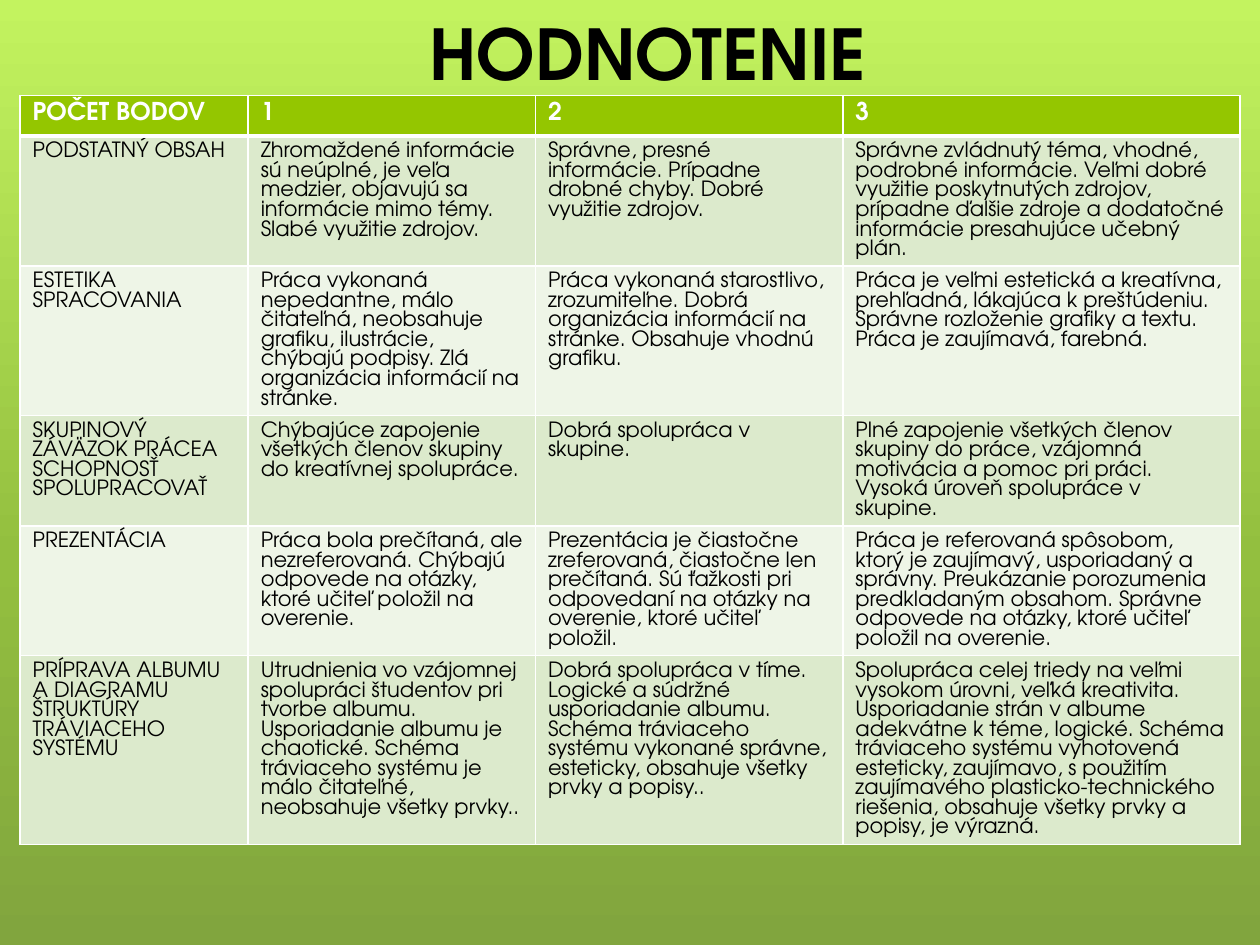
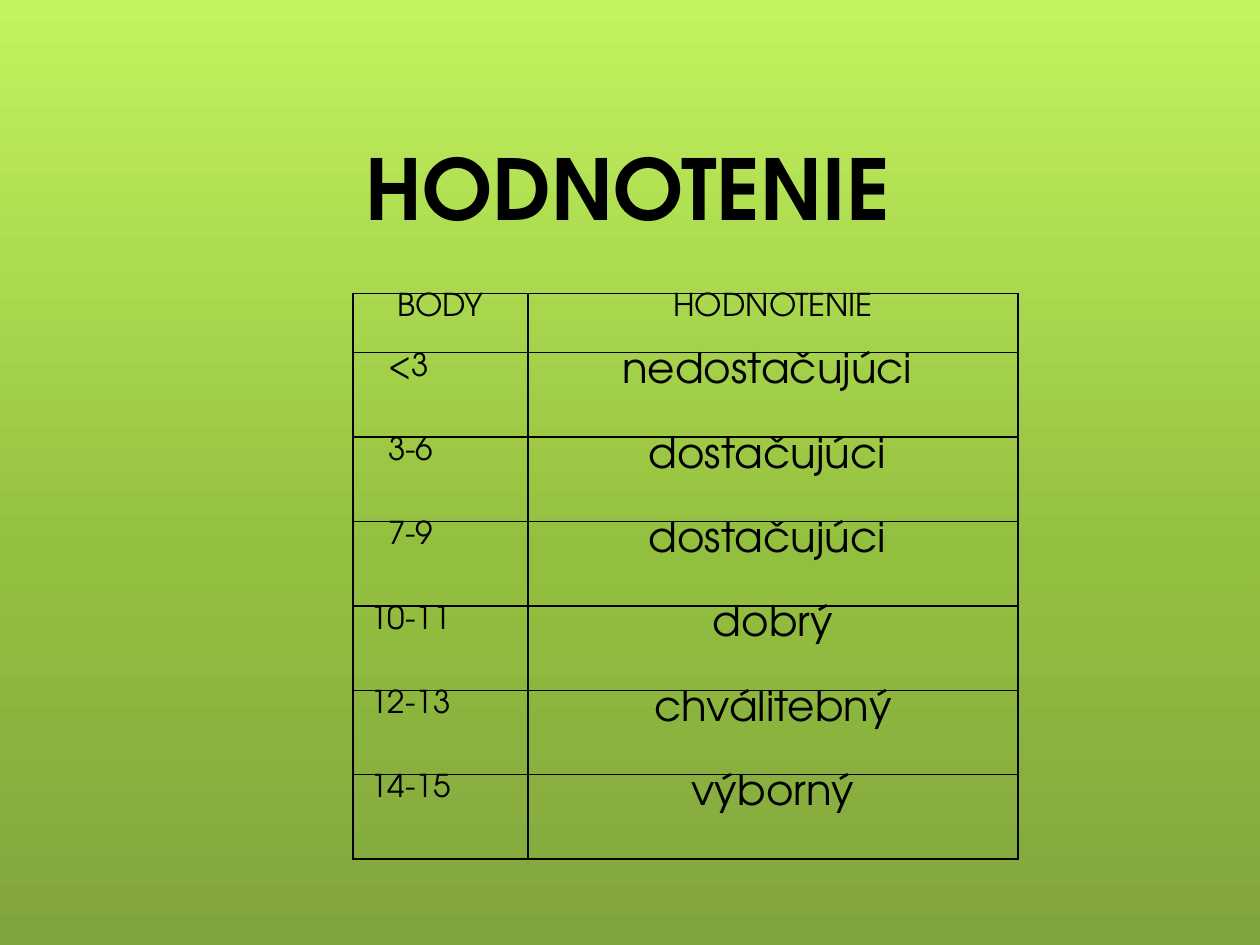
from copy import deepcopy

from lxml import etree
from pptx import Presentation
from pptx import util as u
from pptx.dml.color import RGBColor
from pptx.enum import text
from pptx.oxml.ns import qn

FONT = "TeX Gyre Adventor"
BLACK, WHITE, GREEN = "000000", "FFFFFF", "94C600"
BANDS = ("DCEACC", "EEF5E7")
GRADIENT = [(0, "C3F35F"), (0.59, "93BF3F"), (1, "81A53E")]
TITLE = "HODNOTENIE"

RUBRIC = [
    ("POČET BODOV", "1", "2", "3"),
    ("PODSTATNÝ OBSAH",
     "Zhromaždené informácie sú neúplné, je veľa medzier, objavujú sa informácie "
     "mimo témy. Slabé využitie zdrojov.",
     "Správne, presné informácie. Prípadne drobné chyby. Dobré využitie zdrojov.",
     "Správne zvládnutý téma, vhodné, podrobné informácie. Veľmi dobré využitie "
     "poskytnutých zdrojov, prípadne ďalšie zdroje a dodatočné informácie "
     "presahujúce učebný plán."),
    ("ESTETIKA SPRACOVANIA",
     "Práca vykonaná nepedantne, málo čitateľná, neobsahuje grafiku, ilustrácie, "
     "chýbajú podpisy. Zlá organizácia informácií na stránke.",
     "Práca vykonaná starostlivo, zrozumiteľne. Dobrá organizácia informácií na "
     "stránke. Obsahuje vhodnú grafiku.",
     "Práca je veľmi estetická a kreatívna, prehľadná, lákajúca k preštúdeniu. "
     "Správne rozloženie grafiky a textu. Práca je zaujímavá, farebná."),
    ("SKUPINOVÝ ZÁVÄZOK PRÁCEA SCHOPNOSŤ SPOLUPRACOVAŤ",
     "Chýbajúce zapojenie všetkých členov skupiny do kreatívnej spolupráce.",
     "Dobrá spolupráca v skupine.",
     "Plné zapojenie všetkých členov skupiny do práce, vzájomná motivácia a pomoc "
     "pri práci. Vysoká úroveň spolupráce v skupine."),
    ("PREZENTÁCIA",
     "Práca bola prečítaná, ale nezreferovaná. Chýbajú odpovede na otázky, ktoré "
     "učiteľ položil na overenie.",
     "Prezentácia je čiastočne zreferovaná, čiastočne len prečítaná. Sú ťažkosti "
     "pri odpovedaní na otázky na overenie, ktoré učiteľ položil.",
     "Práca je referovaná spôsobom, ktorý je zaujímavý, usporiadaný a správny. "
     "Preukázanie porozumenia predkladaným obsahom. Správne odpovede na otázky, "
     "ktoré učiteľ položil na overenie."),
    ("PRÍPRAVA ALBUMU A DIAGRAMU ŠTRUKTÚRY TRÁVIACEHO SYSTÉMU",
     "Utrudnienia vo vzájomnej spolupráci študentov pri tvorbe albumu. Usporiadanie "
     "albumu je chaotické. Schéma tráviaceho systému je málo čitateľné, neobsahuje "
     "všetky prvky..",
     "Dobrá spolupráca v tíme. Logické a súdržné usporiadanie albumu. Schéma "
     "tráviaceho systému vykonané správne, esteticky, obsahuje všetky prvky a "
     "popisy..",
     "Spolupráca celej triedy na veľmi vysokom úrovni, veľká kreativita. "
     "Usporiadanie strán v albume adekvátne k téme, logické. Schéma tráviaceho "
     "systému vyhotovená esteticky, zaujímavo, s použitím zaujímavého "
     "plasticko-technického riešenia, obsahuje všetky prvky a popisy, je výrazná."),
]
GRADES = [
    ("BODY", "HODNOTENIE"),
    ("<3", "nedostačujúci "),
    ("3-6", "dostačujúci "),
    ("7-9", "dostačujúci "),
    ("10-11", "dobrý"),
    ("12-13", "chválitebný"),
    ("14-15", "výborný"),
]


def rgb(color):
    return RGBColor.from_string(color)


def style(tf, size, color=BLACK, bold=False, align=text.PP_ALIGN.LEFT):
    for p in tf.paragraphs:
        p.alignment = align
        for r in p.runs:
            r.font.name, r.font.size, r.font.bold = FONT, u.Pt(size), bold
            r.font.color.rgb = rgb(color)


def set_background(master):
    fill = master.background.fill
    fill.gradient()
    fill.gradient_angle = 270
    stops = master.element.find(".//" + qn("a:gsLst"))
    stops.insert(1, deepcopy(stops[0]))
    for stop, (position, color) in zip(fill.gradient_stops, GRADIENT):
        stop.position = position
        stop.color.rgb = rgb(color)


def add_titled_slide(prs, box, size):
    s = prs.slides.add_slide(prs.slide_layouts[5])
    sp = s.shapes.title
    sp.left, sp.top, sp.width, sp.height = map(u.Inches, box)
    tf = sp.text_frame
    tf.text = TITLE
    tf.vertical_anchor = text.MSO_ANCHOR.BOTTOM
    style(tf, size, bold=True, align=text.PP_ALIGN.CENTER)
    return s


def set_borders(cell, color, top=1, bottom=1):
    tc_pr = cell._tc.get_or_add_tcPr()
    widths = {"lnL": 1, "lnR": 1, "lnT": top, "lnB": bottom}
    for i, (tag, width) in enumerate(widths.items()):
        ln = etree.Element(qn("a:" + tag), w=str(u.Pt(width)))
        solid = etree.SubElement(ln, qn("a:solidFill"))
        etree.SubElement(solid, qn("a:srgbClr"), val=color)
        tc_pr.insert(i, ln)


def add_grid(s, left, top, widths, heights, rows):
    size = sum(widths), sum(heights)
    frame = s.shapes.add_table(len(rows), len(widths),
                               *map(u.Inches, (left, top, *size)))
    table = frame.table
    for column, width in zip(table.columns, widths):
        column.width = u.Inches(width)
    for row, height, values in zip(table.rows, heights, rows):
        row.height = u.Inches(height)
        for cell, value in zip(row.cells, values):
            cell.text_frame.text = value
    return table


def add_rubric(s):
    table = add_grid(s, 0.16, 0.76, (1.81, 2.28, 2.44, 3.15),
                     [0.32] + [0.41] * (len(RUBRIC) - 1), RUBRIC)
    for i, row in enumerate(table.rows):
        header = i == 0
        for cell in row.cells:
            set_borders(cell, WHITE, top=3 if i == 1 else 1, bottom=3 if header else 1)
            cell.fill.solid()
            cell.fill.fore_color.rgb = rgb(GREEN if header else BANDS[(i - 1) % 2])
            if header:
                style(cell.text_frame, 14, WHITE, bold=True)
            else:
                style(cell.text_frame, 12)


def add_grades(s):
    inset, indent = 0.07, 0.07
    table = add_grid(s, 2.8, 2.33, (1.39, 3.89),
                     [0.47] + [0.67] * (len(GRADES) - 1), GRADES)
    table.first_row = table.horz_banding = False
    for i, row in enumerate(table.rows):
        for j, cell in enumerate(row.cells):
            set_borders(cell, BLACK)
            cell.fill.background()
            cell.margin_left = cell.margin_right = u.Inches(inset)
            cell.margin_top = cell.margin_bottom = 0
            points = i > 0 and j == 0
            if points:
                steps = 3 if i < 4 else 1
                cell.margin_left = u.Inches(inset + steps * indent)
            style(cell.text_frame, 24 if i > 0 and j == 1 else 18,
                  align=text.PP_ALIGN.LEFT if points else text.PP_ALIGN.CENTER)


def main():
    prs = Presentation()
    prs.slide_width, prs.slide_height = u.Inches(10), u.Inches(7.5)
    set_background(prs.slide_master)
    add_rubric(add_titled_slide(prs, (1.3, 0.02, 7.68, 0.78), 40))
    add_grades(add_titled_slide(prs, (1.14, 0.68, 7.68, 1.25), 48))
    prs.save("out.pptx")


if __name__ == "__main__":
    main()
